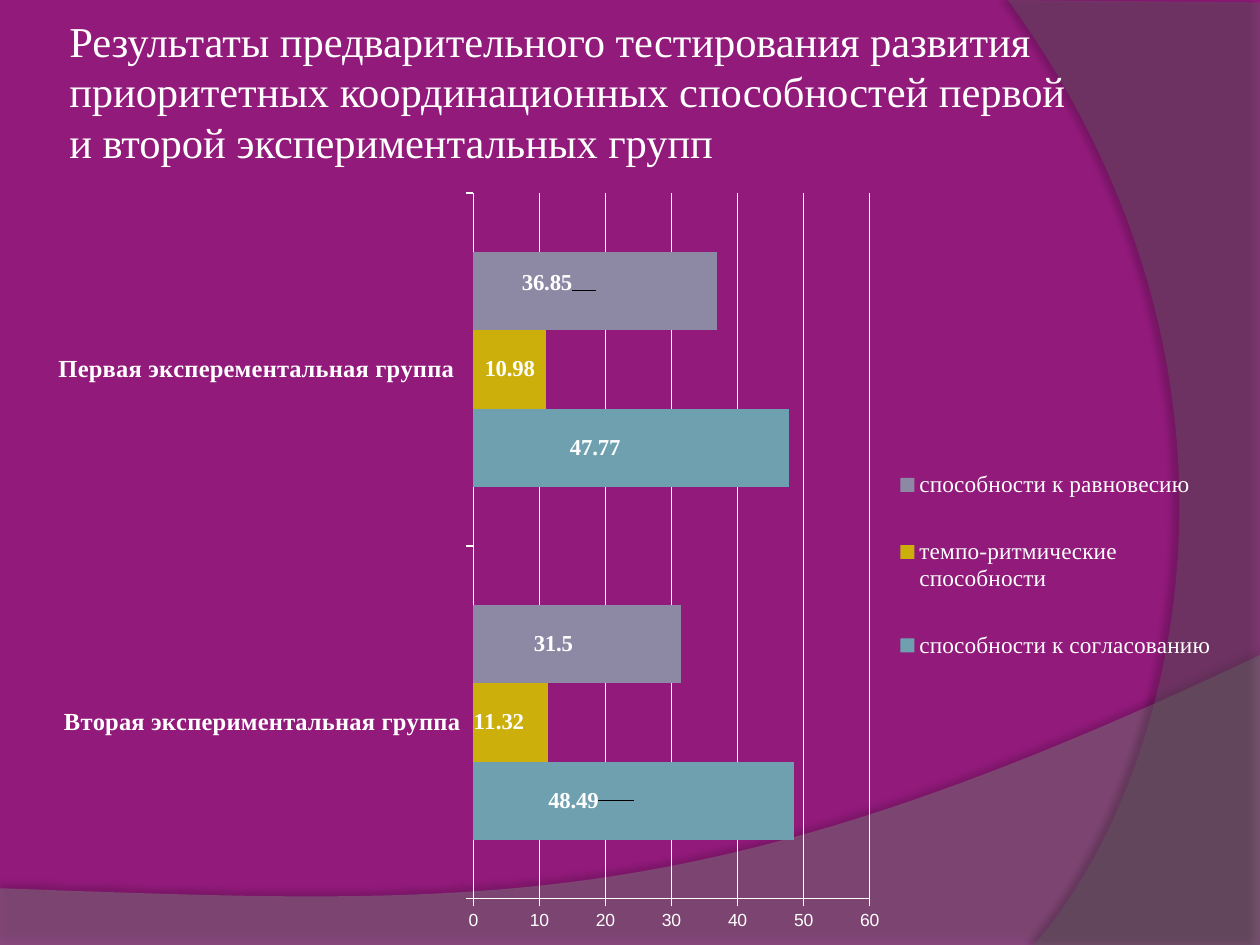
from dataclasses import dataclass

from lxml.etree import SubElement
from pptx import Presentation
from pptx.chart.data import CategoryChartData
from pptx.dml.color import RGBColor
from pptx.enum.chart import (XL_CHART_TYPE, XL_LABEL_POSITION,
                             XL_LEGEND_POSITION, XL_TICK_MARK)
from pptx.enum.text import MSO_ANCHOR
from pptx.oxml import parse_xml
from pptx.oxml.ns import nsdecls, qn
from pptx.util import Pt


@dataclass(frozen=True)
class Theme:
    background: str = "921A7B"
    text: str = "FFFFFF"
    wave: str = "7F7F7F"
    arc: str = "5E5E5E"
    agreement: str = "6EA0B0"
    rhythm: str = "CCAF0A"
    balance: str = "8D89A4"
    serif: str = "Times New Roman"
    sans: str = "Arial"
    title_size: float = 24.3
    category_size: float = 14
    legend_size: float = 13.3
    label_size: float = 13
    axis_size: float = 10


def bezier(start, control_1, control_2, end, steps=60):
    """Points along a cubic curve, both ends included."""
    points = []
    for step in range(steps + 1):
        t = step / steps
        weights = ((1 - t) ** 3, 3 * t * (1 - t) ** 2, 3 * t ** 2 * (1 - t), t ** 3)
        corners = (start, control_1, control_2, end)
        points.append(tuple(sum(w * c[axis] for w, c in zip(weights, corners))
                            for axis in (0, 1)))
    return points


def manual_layout(x, y, width=None, height=None, inner=False):
    """A chart layout in fractions of the chart; an offset if no size is given."""
    layout = parse_xml(f"<c:layout {nsdecls('c')}><c:manualLayout/></c:layout>")
    settings = {}
    if inner:
        settings["layoutTarget"] = "inner"
    if width is not None:
        settings.update(xMode="edge", yMode="edge")
    settings.update(x=x, y=y)
    if width is not None:
        settings.update(w=width, h=height)
    for name, value in settings.items():
        SubElement(layout[0], qn(f"c:{name}")).set("val", str(value))
    return layout


class SlideBuilder:
    def __init__(self, slide, theme):
        self.slide = slide
        self.theme = theme
        fill = slide.background.fill
        fill.solid()
        fill.fore_color.rgb = RGBColor.from_string(theme.background)

    def style_font(self, font, size, name, bold=False):
        font.size, font.name, font.bold = Pt(size), name, bold
        font.color.rgb = RGBColor.from_string(self.theme.text)

    def veil(self, points, color, opacity, shadow_opacity, distance, direction):
        """A translucent area with a soft shadow along its edge."""
        outline = [(Pt(x), Pt(y)) for x, y in points]
        builder = self.slide.shapes.build_freeform(*outline[0])
        builder.add_line_segments(outline[1:], close=True)
        shape = builder.convert_to_shape()
        shape.line.fill.background()
        shape.fill.solid()
        shape.fill.fore_color.rgb = RGBColor.from_string(color)
        color_element = shape.element.spPr.find(f"{qn('a:solidFill')}/{qn('a:srgbClr')}")
        SubElement(color_element, qn("a:alpha")).set("val", str(opacity * 1000))
        shape.element.spPr.append(parse_xml(
            f"<a:effectLst {nsdecls('a')}><a:outerShdw blurRad='{Pt(4)}' "
            f"dist='{Pt(distance)}' dir='{direction * 60000}' algn='ctr' "
            f"rotWithShape='0'><a:srgbClr val='000000'>"
            f"<a:alpha val='{shadow_opacity * 1000}'/></a:srgbClr>"
            "</a:outerShdw></a:effectLst>"))

    def title(self, text, left, top, width, height):
        box = self.slide.shapes.add_textbox(Pt(left), Pt(top), Pt(width), Pt(height))
        frame = box.text_frame
        frame.word_wrap = True
        frame.vertical_anchor = MSO_ANCHOR.TOP
        frame.margin_left = frame.margin_right = Pt(3.6)
        frame.margin_top = frame.margin_bottom = Pt(3.6)
        paragraph = frame.paragraphs[0]
        paragraph.text = text
        paragraph.line_spacing = Pt(29)
        self.style_font(paragraph.font, self.theme.title_size, self.theme.serif)

    def bar_chart(self, categories, series_list, left, top, width, height):
        """series_list holds (name, colour, values, label offsets)."""
        theme = self.theme
        white = RGBColor.from_string(theme.text)
        data = CategoryChartData()
        data.categories = categories
        for name, _, values, _ in series_list:
            data.add_series(name, values)
        chart = self.slide.shapes.add_chart(
            XL_CHART_TYPE.BAR_CLUSTERED, Pt(left), Pt(top), Pt(width), Pt(height),
            data).chart
        chart.has_title = False
        self.style_font(chart.font, theme.axis_size, theme.sans)

        # Axes and gridlines
        category_axis, value_axis = chart.category_axis, chart.value_axis
        value_axis.minimum_scale, value_axis.maximum_scale = 0, 60
        value_axis.major_unit = 10
        value_axis.has_major_gridlines = True
        for axis in (category_axis, value_axis):
            axis.major_tick_mark = XL_TICK_MARK.OUTSIDE
        for holder in (category_axis, value_axis, value_axis.major_gridlines):
            holder.format.line.color.rgb = white
            holder.format.line.width = Pt(0.75)
        self.style_font(category_axis.tick_labels.font, theme.category_size,
                        theme.serif, bold=True)
        self.style_font(value_axis.tick_labels.font, theme.axis_size, theme.sans)

        # Bars and their labels
        plot = chart.plots[0]
        plot.gap_width, plot.overlap = 150, 0
        plot.vary_by_categories = False
        for series, (_, color, _, offsets) in zip(plot.series, series_list):
            series.format.fill.solid()
            series.format.fill.fore_color.rgb = RGBColor.from_string(color)
            for index in range(len(offsets)):
                label = series.points[index].data_label
                self.style_font(label.font, theme.label_size, theme.serif, bold=True)
                label.position = XL_LABEL_POSITION.CENTER
            for element, offset in zip(series._element.iter(qn("c:dLbl")), offsets):
                element.insert(1, manual_layout(*offset))

        # Legend and plot area
        chart.has_legend = True
        legend = chart.legend
        legend.position = XL_LEGEND_POSITION.RIGHT
        legend.include_in_layout = False
        self.style_font(legend.font, theme.legend_size, theme.serif)
        legend._element.find(qn("c:legendPos")).addnext(
            manual_layout(0.72, 0.33, 0.27, 0.35))
        plot_area = chart._chartSpace.chart.plotArea
        for layout in plot_area.findall(qn("c:layout")):
            plot_area.remove(layout)
        plot_area.insert(0, manual_layout(0.37, 0.02, 0.33, 0.92, inner=True))


def main():
    theme = Theme()
    presentation = Presentation()
    presentation.slide_width, presentation.slide_height = Pt(720), Pt(540)
    slide = presentation.slides.add_slide(presentation.slide_layouts[6])
    builder = SlideBuilder(slide, theme)

    # Background wave and arc
    wave = bezier((720, 374.4), (402.5, 525), (281.5, 517.7), (0, 507.6))
    builder.veil(wave + [(0, 540), (720, 540)], theme.wave, 45, 35, 3.5, 270)
    arc = bezier((591, 540), (673.2, 445.7), (733, 216), (576, 0))
    builder.veil(arc + [(720, 1.4), (720, 540)], theme.arc, 40, 45, 4, 180)

    # Title
    builder.title("Результаты предварительного тестирования развития приоритетных "
                  "координационных способностей первой и второй "
                  "экспериментальных групп", 36, 5, 588.2, 94)

    # Test results
    builder.bar_chart(
        ["Вторая экспериментальная группа", "Первая эксперементальная группа "],
        [("способности к согласованию", theme.agreement, (48.49, 47.77),
          ((-0.05, 0), (-0.03, 0))),
         ("темпо-ритмические способности", theme.rhythm, (11.32, 10.98),
          ((-0.01, 0), (0, 0))),
         ("способности к равновесию", theme.balance, (31.5, 36.85),
          ((-0.02, 0), (-0.04, -0.01)))],
        16.6, 101.5, 686.2, 438.5)

    presentation.save("out.pptx")


if __name__ == "__main__":
    main()
